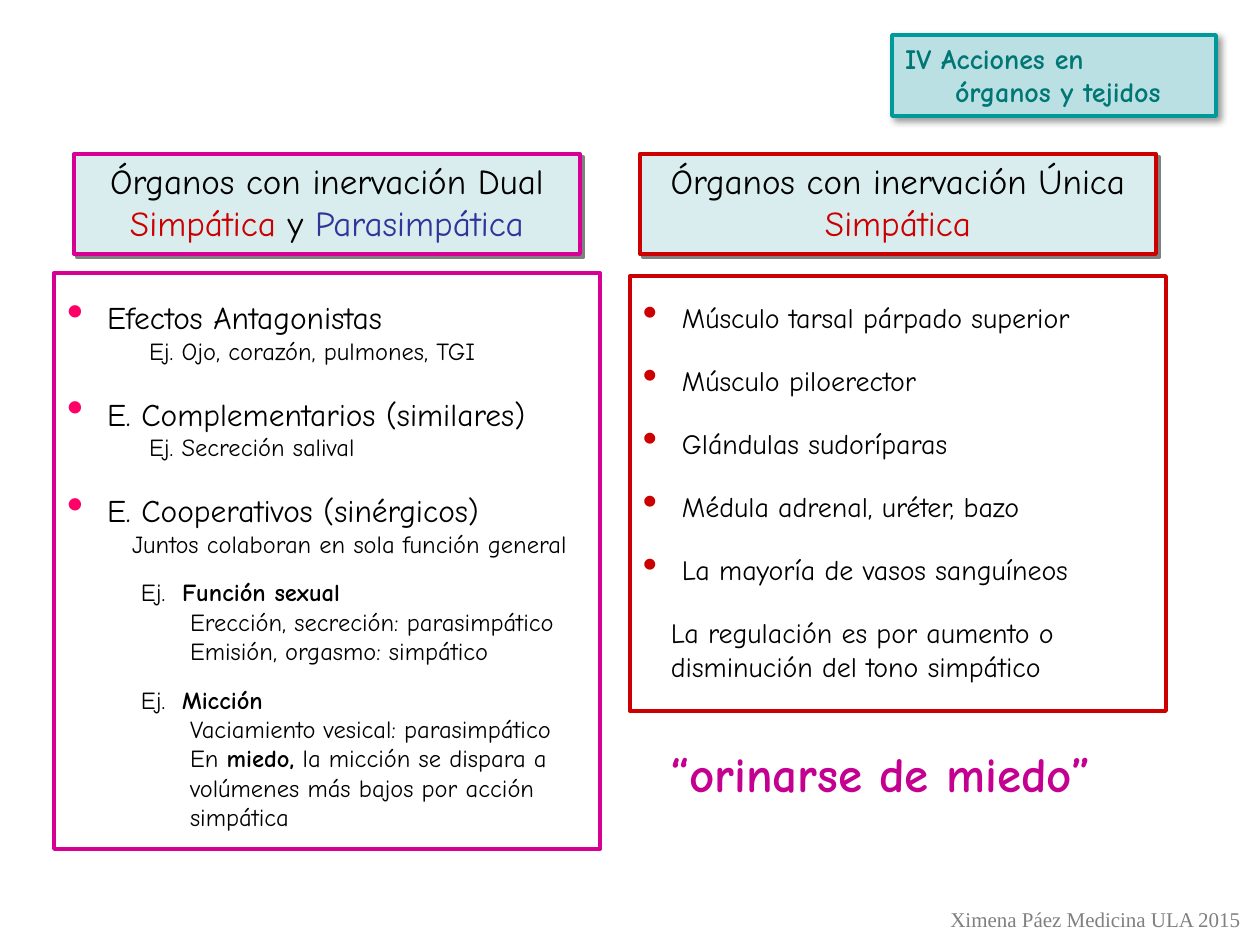
from dataclasses import dataclass

import pptx
import pptx.dml.color
import pptx.enum.shapes
import pptx.enum.text
import pptx.oxml
import pptx.oxml.ns
import pptx.util
from lxml import etree

EMU_PER_PX = 914400 / 126
COLORS = {
    "black": "000000", "red": "CC0000", "magenta": "D60093", "pink": "FF0066",
    "blue": "333399", "teal": "009999", "dark teal": "007774", "gray": "808080",
    "purple": "C40091", "pale teal": "BBE0E3", "ice": "D9EDEF",
}
ALIGN = pptx.enum.text.PP_ALIGN
SIDE_INSET, TOP_INSET, LIST_INSET = 13, 6, 25
SMALL_GAP, LARGE_GAP = 10.8, 16.8


def px(length: float) -> int:
    return round(length * EMU_PER_PX)


@dataclass
class Span:
    text: str
    color: str = "black"
    bold: bool = False


@dataclass
class Line:
    spans: list[Span]
    size: int
    margin: int = 0
    hang: int = 0
    gap: float = 0
    bullet: str = ""
    align: ALIGN = ALIGN.LEFT
    font: str = "Comic Neue"


@dataclass
class Shadow:
    color: str
    alpha: int
    blur: float
    distance: float


@dataclass
class Panel:
    box: tuple[int, int, int, int]
    lines: list[Line]
    border: str = ""
    fill: str = ""
    shadow: Shadow | None = None
    top_inset: int = TOP_INSET
    wrap: bool = True


def rgb(name: str) -> pptx.dml.color.RGBColor:
    return pptx.dml.color.RGBColor.from_string(COLORS[name])


def add_shadow(shape, shadow: Shadow) -> None:
    blur, distance = (int(pptx.util.Pt(v)) for v in (shadow.blur, shadow.distance))
    effects = shape._element.spPr.find(pptx.oxml.ns.qn("a:effectLst"))
    effects.append(pptx.oxml.parse_xml(
        f'<a:outerShdw {pptx.oxml.ns.nsdecls("a")} blurRad="{blur}" dist="{distance}" '
        f'dir="2700000" algn="tl" rotWithShape="0"><a:srgbClr val="{COLORS[shadow.color]}">'
        f'<a:alpha val="{shadow.alpha * 1000}"/></a:srgbClr></a:outerShdw>'))


def write_line(paragraph, line: Line) -> None:
    properties = paragraph._p.get_or_add_pPr()
    properties.set("marL", str(px(line.margin)))
    properties.set("indent", str(-px(line.hang)))
    if line.bullet:
        color = etree.SubElement(properties, pptx.oxml.ns.qn("a:buClr"))
        etree.SubElement(color, pptx.oxml.ns.qn("a:srgbClr"), val=COLORS[line.bullet])
        etree.SubElement(properties, pptx.oxml.ns.qn("a:buSzPct"), val="150000")
        etree.SubElement(properties, pptx.oxml.ns.qn("a:buChar"), char="•")
    paragraph.alignment = line.align
    paragraph.space_before = pptx.util.Pt(line.gap)
    for span in line.spans:
        run = paragraph.add_run()
        run.text = span.text
        run.font.name = line.font
        run.font.size = pptx.util.Pt(line.size)
        run.font.bold = span.bold
        run.font.color.rgb = rgb(span.color)


def add_panel(slide, panel: Panel) -> None:
    box = [px(length) for length in panel.box]
    if panel.border:
        shape = slide.shapes.add_shape(pptx.enum.shapes.MSO_SHAPE.RECTANGLE, *box)
        shape.shadow.inherit = False
        shape.line.color.rgb = rgb(panel.border)
        shape.line.width = pptx.util.Pt(2.25)
        if panel.fill:
            shape.fill.solid()
            shape.fill.fore_color.rgb = rgb(panel.fill)
        else:
            shape.fill.background()
        if panel.shadow:
            add_shadow(shape, panel.shadow)
    else:
        shape = slide.shapes.add_textbox(*box)
    frame = shape.text_frame
    frame.word_wrap = panel.wrap
    frame.vertical_anchor = pptx.enum.text.MSO_ANCHOR.TOP
    frame.margin_left = frame.margin_right = px(SIDE_INSET)
    frame.margin_top, frame.margin_bottom = px(panel.top_inset), px(TOP_INSET)
    for index, line in enumerate(panel.lines):
        write_line(frame.add_paragraph() if index else frame.paragraphs[0], line)


def effect(name: str, detail: str, margin: int, gap: float = LARGE_GAP) -> list[Line]:
    return [Line([Span(name)], 18, 40, 40, gap, "pink"), Line([Span(detail)], 14, margin)]


def example(name: str, *details: list[Span]) -> list[Line]:
    heading = Line([Span("Ej.\t"), Span(name, bold=True)], 14, 115, 41, SMALL_GAP)
    return [heading] + [Line(spans, 14, 123) for spans in details]


def header(left: int, width: int, border: str, *spans: Span) -> Panel:
    return Panel((left, 154, width, 100), [Line(list(spans), 20, align=ALIGN.CENTER)],
                 border, "ice", Shadow("gray", 100, 0, 2.8))


dual_effects = [
    *effect("Efectos Antagonistas", "Ej. Ojo, corazón, pulmones, TGI", 82, 0),
    *effect("E. Complementarios (similares)", "Ej. Secreción salival", 82),
    *effect("E. Cooperativos (sinérgicos)", "Juntos colaboran en sola función general", 65),
    *example("Función sexual",
             [Span("Erección, secreción: parasimpático")],
             [Span("Emisión, orgasmo: simpático")]),
    *example("Micción",
             [Span("Vaciamiento vesical: parasimpático")],
             [Span("En "), Span("miedo,", bold=True),
              Span(" la micción se dispara a volúmenes más bajos por acción simpática")]),
]
single_organs = [
    Line([Span(organ)], 16, 39, 39, LARGE_GAP if index else 0, "red")
    for index, organ in enumerate([
        "Músculo tarsal párpado superior", "Músculo piloerector", "Glándulas sudoríparas",
        "Médula adrenal, uréter, bazo", "La mayoría de vasos sanguíneos"])
]
regulation = Line([Span("La regulación es por aumento o disminución del tono simpático")],
                  16, 28, gap=LARGE_GAP)
section = [Line([Span(text, "dark teal", True)], 16, margin)
           for text, margin in (("IV Acciones en", 0), ("órganos y tejidos", 50))]

PANELS = [
    Panel((54, 273, 546, 576), dual_effects, "magenta", top_inset=LIST_INSET),
    Panel((892, 35, 324, 81), section, "teal", "pale teal", Shadow("black", 40, 4, 3)),
    Panel((630, 276, 536, 435), [*single_organs, regulation], "red", top_inset=LIST_INSET),
    header(74, 506, "magenta", Span("Órganos con inervación Dual "), Span("Simpática ", "red"),
           Span("y "), Span("Parasimpática", "blue")),
    header(640, 516, "red", Span("Órganos con inervación Única "), Span("Simpática", "red")),
    Panel((658, 737, 495, 72), [Line([Span("“orinarse de miedo”", "purple", True)], 28)]),
    Panel((936, 901, 319, 38), [Line([Span("Ximena Páez Medicina ULA 2015", "gray")], 12,
                                     align=ALIGN.CENTER, font="Times New Roman")], wrap=False),
]


def main() -> None:
    presentation = pptx.Presentation()
    presentation.slide_width, presentation.slide_height = px(1260), px(945)
    slide = presentation.slides.add_slide(presentation.slide_layouts[6])
    for panel in PANELS:
        add_panel(slide, panel)
    presentation.save("out.pptx")


if __name__ == "__main__":
    main()
